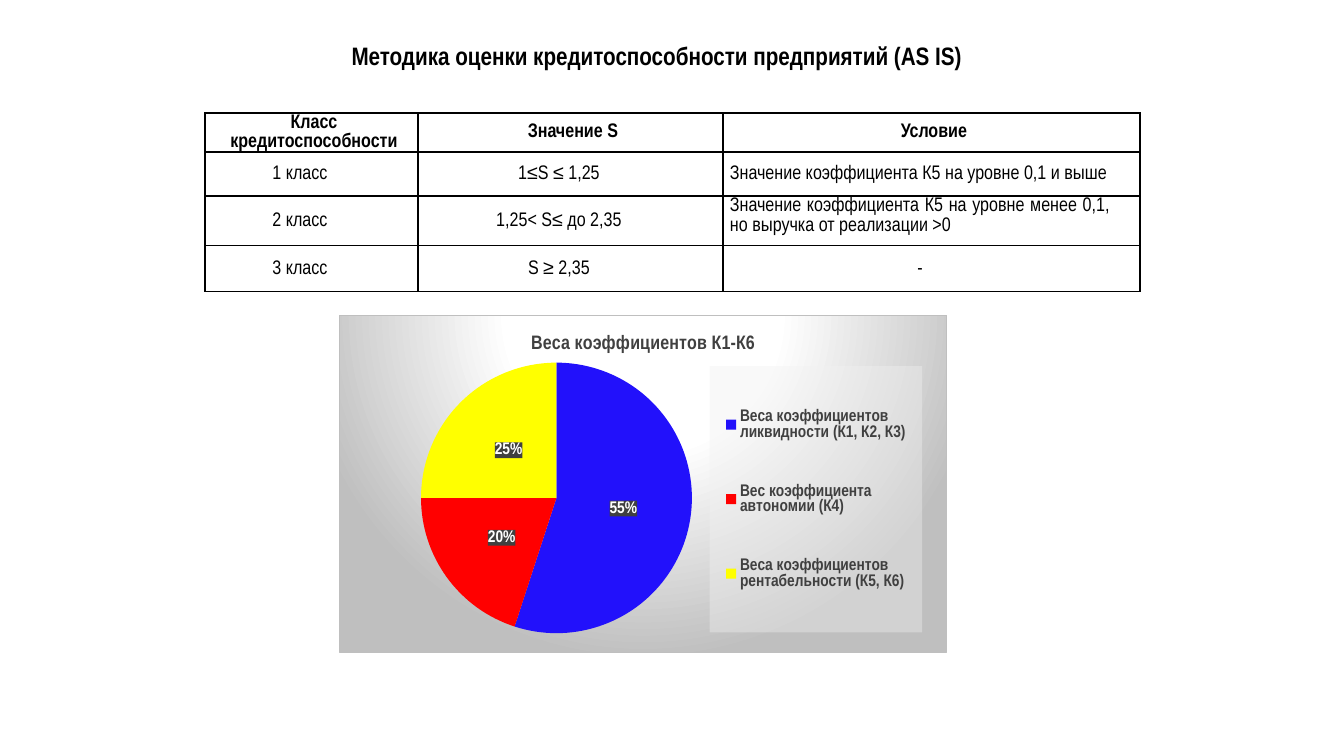
"""Builds the slide on credit rating of companies: a table of classes and a pie of weights."""
import lxml.etree
import pptx
import pptx.chart.data
import pptx.dml.color
import pptx.enum.chart
import pptx.enum.text
import pptx.oxml
import pptx.oxml.ns
import pptx.util

FONT = "Arial Narrow"
SCALE = 914400 / 100.8
NAMESPACES = pptx.oxml.ns.nsdecls("a", "c")
qn = pptx.oxml.ns.qn
ALIGN = pptx.enum.text.PP_ALIGN
ANCHOR = pptx.enum.text.MSO_ANCHOR
color = pptx.dml.color.RGBColor.from_string


def px(length):
    """Turn px into EMU."""
    return pptx.util.Emu(round(length * SCALE))


def set_font(font, size, hex_color, bold):
    """Set the slide's typeface with the given size, colour and weight."""
    font.name = FONT
    font.size = pptx.util.Pt(size)
    font.color.rgb = color(hex_color)
    font.bold = bold


presentation = pptx.Presentation()
presentation.slide_width, presentation.slide_height = px(1344), px(756)
slide = presentation.slides.add_slide(presentation.slide_layouts[5])

title = slide.shapes.title
title.left, title.top, title.width, title.height = px(253), px(35), px(808), px(40)
title.text_frame.text = "Методика оценки кредитоспособности предприятий (AS IS)"
title.text_frame.vertical_anchor = ANCHOR.MIDDLE
title.text_frame.auto_size = pptx.enum.text.MSO_AUTO_SIZE.NONE
title_paragraph = title.text_frame.paragraphs[0]
title_paragraph.alignment = ALIGN.CENTER
set_font(title_paragraph.font, 18, "000000", True)

column_widths = [213, 305, 417]
row_heights = [39, 44, 50, 46]
rows = [
    ["Класс\nкредитоспособности", "Значение S", "Условие"],
    ["1 класс", "1≤S ≤ 1,25", "Значение коэффициента К5 на уровне 0,1 и выше"],
    ["2 класс", "1,25< S≤ до 2,35",
     "Значение коэффициента К5 на уровне менее 0,1, но выручка от реализации >0"],
    ["3 класс", "S ≥ 2,35", "-"],
]
special_alignment = {(1, 2): ALIGN.LEFT, (2, 2): ALIGN.JUSTIFY}

table = slide.shapes.add_table(
    len(rows), len(column_widths), px(205), px(113),
    px(sum(column_widths)), px(sum(row_heights))).table
table.first_row = table.horz_banding = False
for column, width in zip(table.columns, column_widths):
    column.width = px(width)
for table_row, height in zip(table.rows, row_heights):
    table_row.height = px(height)

for row_index, texts in enumerate(rows):
    is_header = row_index == 0
    for column_index, text in enumerate(texts):
        position = (row_index, column_index)
        cell = table.cell(*position)
        cell.text = text
        cell.margin_left = cell.margin_right = cell.margin_top = cell.margin_bottom = 0
        cell.vertical_anchor = ANCHOR.TOP if position == (2, 2) else ANCHOR.MIDDLE
        for paragraph in cell.text_frame.paragraphs:
            paragraph.alignment = special_alignment.get(position, ALIGN.CENTER)
            paragraph.line_spacing = pptx.util.Pt(13.4) if is_header else 1.07
            set_font(paragraph.font, 14, "000000", is_header)
            properties = paragraph._p.get_or_add_pPr()
            properties.set("marL", str(px(5 if is_header else 7)))
            properties.set("marR", str(px(0 if is_header else 30)))
        cell_properties = cell._tc.get_or_add_tcPr()
        for side in ("lnL", "lnR", "lnT", "lnB"):
            cell_properties.append(pptx.oxml.parse_xml(
                f'<a:{side} {NAMESPACES} w="12700"><a:solidFill>'
                f'<a:srgbClr val="000000"/></a:solidFill></a:{side}>'))
        cell.fill.background()

weights = pptx.chart.data.CategoryChartData(number_format="General")
weights.categories = [
    "Веса коэффициентов ликвидности (К1, К2, К3)",
    "Вес коэффициента автономии (К4)",
    "Веса коэффициентов рентабельности (К5, К6)",
]
weights.add_series("Series 1", [55, 20, 25])
chart = slide.shapes.add_chart(
    pptx.enum.chart.XL_CHART_TYPE.PIE, px(339), px(315), px(608), px(338), weights).chart
chart.font.name = "Calibri"
chart.font.size = pptx.util.Pt(10)
chart.font.color.rgb = color("000000")

chart.has_title = True
chart.chart_title.text_frame.text = "Веса коэффициентов К1-К6"
set_font(chart.chart_title.text_frame.paragraphs[0].font, 14, "404040", True)

chart.has_legend = True
legend = chart.legend
legend.position = pptx.enum.chart.XL_LEGEND_POSITION.RIGHT
legend.include_in_layout = False
set_font(legend.font, 12, "404040", True)

plot = chart.plots[0]
plot.vary_by_categories = True
for point_index, slice_color in enumerate(["2211FB", "FF0000", "FFFF00"]):
    slice_fill = plot.series[0].points[point_index].format.fill
    slice_fill.solid()
    slice_fill.fore_color.rgb = color(slice_color)

plot.has_data_labels = True
labels = plot.data_labels
labels.show_value = False
labels.show_percentage = True
labels.number_format = "0%"
labels.number_format_is_linked = False
labels.position = pptx.enum.chart.XL_LABEL_POSITION.CENTER
set_font(labels.font, 12, "FFFFFF", True)

chart_space = chart._chartSpace
for parent_tag, next_tag, fractions in [
    ("c:title", "c:overlay", {"x": 0.31, "y": 0.04}),
    ("c:plotArea", "c:pieChart", {"x": 0.134, "y": 0.14, "w": 0.447, "h": 0.803}),
    ("c:legend", "c:overlay", {"x": 0.61, "y": 0.15, "w": 0.35, "h": 0.79}),
]:
    parent = chart_space.chart.find(qn(parent_tag))
    for old_layout in parent.findall(qn("c:layout")):
        parent.remove(old_layout)
    layout = pptx.oxml.parse_xml(f"<c:layout {NAMESPACES}><c:manualLayout/></c:layout>")
    settings = {"xMode": "edge", "yMode": "edge", **fractions}
    if parent_tag == "c:plotArea":
        settings = {"layoutTarget": "inner", **settings}
    for name, value in settings.items():
        lxml.etree.SubElement(layout[0], qn(f"c:{name}")).set("val", str(value))
    parent.find(qn(next_tag)).addprevious(layout)

chart_fill = (
    '<a:gradFill><a:gsLst><a:gs pos="0"><a:srgbClr val="FFFFFF"/></a:gs>'
    '<a:gs pos="39000"><a:srgbClr val="FFFFFF"/></a:gs>'
    '<a:gs pos="100000"><a:srgbClr val="BFBFBF"/></a:gs></a:gsLst>'
    '<a:path path="circle"><a:fillToRect l="50000" t="-80000" r="50000" b="180000"/></a:path>'
    '</a:gradFill><a:ln w="9525"><a:solidFill><a:srgbClr val="BFBFBF"/></a:solidFill></a:ln>')
legend_fill = '<a:solidFill><a:srgbClr val="F2F2F2"><a:alpha val="39000"/></a:srgbClr></a:solidFill>'
label_fill = '<a:solidFill><a:srgbClr val="404040"/></a:solidFill>'
for element, fill in [
    (chart_space, chart_fill),
    (legend._element, legend_fill),
    (labels._element, label_fill),
]:
    element.find(qn("c:txPr")).addprevious(
        pptx.oxml.parse_xml(f"<c:spPr {NAMESPACES}>{fill}</c:spPr>"))

presentation.save("out.pptx")
